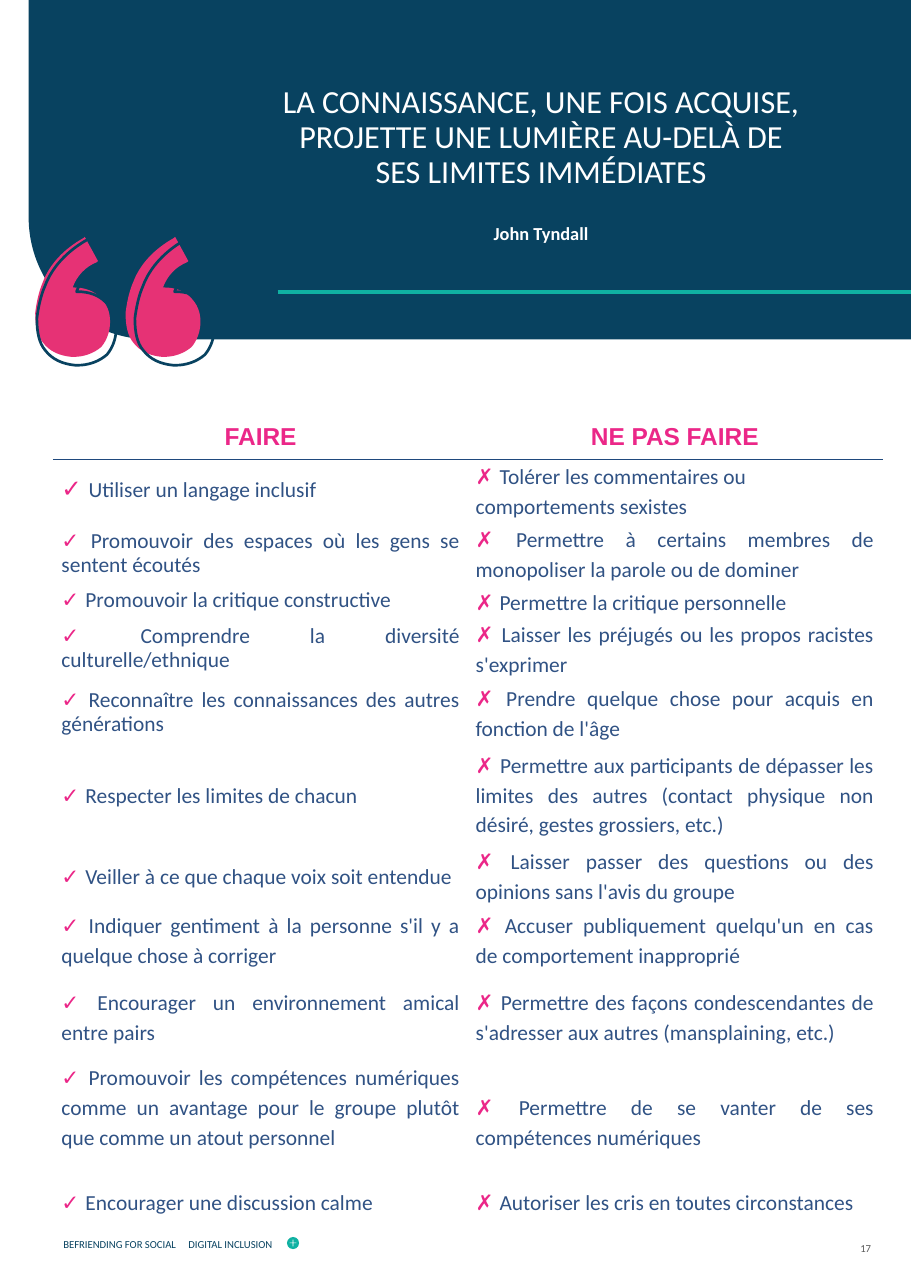
from dataclasses import dataclass
from typing import Optional

from lxml.etree import SubElement
from pptx import Presentation
from pptx.dml.color import RGBColor
from pptx.enum.shapes import MSO_CONNECTOR, MSO_SHAPE
from pptx.enum.text import MSO_ANCHOR, MSO_AUTO_SIZE, PP_ALIGN
from pptx.oxml.ns import qn
from pptx.util import Emu, Inches, Pt

WIDTH, HEIGHT = Inches(8.27), Inches(11.69)


@dataclass(frozen=True)
class Theme:
    navy: str = "084260"
    teal: str = "10B1A2"
    rose: str = "E63275"
    magenta: str = "EB2788"
    text_blue: str = "305284"
    rule_blue: str = "1F497D"
    gray: str = "595959"
    white: str = "FFFFFF"
    body_font: str = "Calibri"
    mark_font: str = "Arial"
    quote_size: float = 21
    author_size: float = 12
    heading_size: float = 16
    body_size: float = 14
    footer_size: float = 7


THEME = Theme()


@dataclass(frozen=True)
class Area:
    """A rectangle in percent of the slide's width and height."""
    left: float
    top: float
    width: float
    height: float

    def emu(self) -> tuple:
        return across(self.left), down(self.top), across(self.width), down(self.height)


@dataclass(frozen=True)
class Advice:
    height: float
    do: str
    avoid: str
    do_spacing: float = 1.15
    do_mark_size: float = THEME.body_size
    avoid_align: PP_ALIGN = PP_ALIGN.JUSTIFY
    do_bottom: float = 0


@dataclass(frozen=True)
class QuotePair:
    """Two quote marks, side by side, drawn as one shape."""
    lefts: tuple
    top: float
    scale: float = 1
    fill: Optional[str] = None
    line: Optional[str] = None


ADVICE = [
    Advice(4.79, "Utiliser un langage inclusif",
           "Tolérer les commentaires ou comportements sexistes",
           0.9, THEME.heading_size, PP_ALIGN.LEFT),
    Advice(4.99, "Promouvoir des espaces où les gens se sentent écoutés",
           "Permettre à certains membres de monopoliser la parole ou de dominer", 0.9),
    Advice(2.4, "Promouvoir la critique constructive", "Permettre la critique personnelle", 0.9),
    Advice(4.99, "Comprendre la diversité culturelle/ethnique",
           "Laisser les préjugés ou les propos racistes s'exprimer", 0.9),
    Advice(4.99, "Reconnaître les connaissances des autres générations",
           "Prendre quelque chose pour acquis en fonction de l'âge", 0.9),
    Advice(7.61, "Respecter les limites de chacun",
           "Permettre aux participants de dépasser les limites des autres "
           "(contact physique non désiré, gestes grossiers, etc.)"),
    Advice(4.99, "Veiller à ce que chaque voix soit entendue",
           "Laisser passer des questions ou des opinions sans l'avis du groupe"),
    Advice(4.99, "Indiquer gentiment à la personne s'il y a quelque chose à corriger",
           "Accuser publiquement quelqu'un en cas de comportement inapproprié"),
    Advice(7.01, "Encourager un environnement amical entre pairs",
           "Permettre des façons condescendantes de s'adresser aux autres (mansplaining, etc.)"),
    Advice(9.3, "Promouvoir les compétences numériques comme un avantage "
           "pour le groupe plutôt que comme un atout personnel",
           "Permettre de se vanter de ses compétences numériques", do_bottom=2.33),
    Advice(3.08, "Encourager une discussion calme", "Autoriser les cris en toutes circonstances"),
]

# One quote mark on a 68 by 109 grid: each segment is a line or a cubic curve.
MARK_START = (35, 109)
MARK_SEGMENTS = [
    [(35, 109), (34, 109), (33, 109)], [(22, 108), (13, 104), (7, 96)],
    [(2, 90), (0, 81), (0, 69)], [(1, 61), (3, 50), (7, 41)],
    [(13, 25), (26, 11), (44, 1)], [(45, 0)], [(57, 22)], [(56, 23)],
    [(46, 27), (38, 35), (34, 46)], [(35, 46)], [(45, 46), (53, 49), (59, 55)],
    [(65, 61), (68, 68), (68, 77)], [(68, 86), (65, 94), (60, 100)],
    [(53, 106), (44, 109), (35, 109)],
]
QUOTE_PAIRS = [
    QuotePair((3.87, 13.79), 18.39, fill=THEME.rose),
    QuotePair((4.05, 14.81), 18.48, 1.06, line=THEME.navy),
]


def across(percent: float) -> Emu:
    return Emu(round(WIDTH * percent / 100))


def down(percent: float) -> Emu:
    return Emu(round(HEIGHT * percent / 100))


def color(value: str) -> RGBColor:
    return RGBColor.from_string(value)


def add_span(para, text: str, size: float, tint: str,
             font: str = THEME.body_font, bold: bool = False) -> None:
    span = para.add_run()
    span.text = text
    span.font.name, span.font.size, span.font.bold = font, Pt(size), bold
    span.font.color.rgb = color(tint)


def paint(shape, fill: Optional[str], line: Optional[str] = None) -> None:
    shape.shadow.inherit = False
    if fill:
        shape.fill.solid()
        shape.fill.fore_color.rgb = color(fill)
    else:
        shape.fill.background()
    if line:
        shape.line.color.rgb = color(line)
        shape.line.width = Pt(1.75)
    else:
        shape.line.fill.background()


def add_preset(page, preset: MSO_SHAPE, area: Area, fill: str):
    shape = page.shapes.add_shape(preset, *area.emu())
    paint(shape, fill)
    return shape


def add_label(page, area: Area, text: str, tint: str, align: PP_ALIGN, tab: float = 0) -> None:
    frame = page.shapes.add_textbox(*area.emu()).text_frame
    frame.word_wrap = True
    frame.vertical_anchor = MSO_ANCHOR.MIDDLE
    para = frame.paragraphs[0]
    para.alignment = align
    if tab:
        stops = SubElement(para._p.get_or_add_pPr(), qn("a:tabLst"))
        SubElement(stops, qn("a:tab"), pos=str(across(tab)), algn="l")
    add_span(para, text, THEME.footer_size, tint)


def bend(shape, segments: list) -> None:
    """Turn each run of three line points that belongs to a curve into a cubic curve."""
    lines = iter(list(shape._element.iter(qn("a:lnTo"))))
    for segment in segments:
        first, *others = [next(lines) for _ in segment]
        if others:
            first.tag = qn("a:cubicBezTo")
            for line in others:
                first.append(line[0])
                line.getparent().remove(line)


def add_quote_pair(page, pair: QuotePair) -> None:
    unit = down(9.32) / 109 * pair.scale
    builder = None
    for left in pair.lefts:
        start, *points = [(across(left) + x * unit, down(pair.top) + y * unit)
                          for x, y in [MARK_START, *sum(MARK_SEGMENTS, [])]]
        if builder is None:
            builder = page.shapes.build_freeform(*start)
        else:
            builder.move_to(*start)
        builder.add_line_segments(points, close=True)
    shape = builder.convert_to_shape()
    bend(shape, MARK_SEGMENTS * len(pair.lefts))
    paint(shape, pair.fill, pair.line)


def add_header(page) -> None:
    panel = add_preset(page, MSO_SHAPE.ROUND_1_RECTANGLE, Area(3.14, 0, 96.86, 26.35), THEME.navy)
    panel.rotation = 180
    panel.adjustments[0] = 0.36
    rule = page.shapes.add_connector(MSO_CONNECTOR.STRAIGHT, across(30.47), down(22.67),
                                     across(100), down(22.67))
    rule.line.color.rgb = color(THEME.teal)
    rule.line.width = Pt(3)
    SubElement(rule._element.spPr, qn("a:effectLst"))


def add_quote(page) -> None:
    title = page.shapes.title
    page.shapes._spTree.append(title._element)  # bring in front of the panel
    title.left, title.top, title.width, title.height = Area(26.2, 4.7, 63.36, 16.25).emu()
    frame = title.text_frame
    frame.auto_size, frame.word_wrap = MSO_AUTO_SIZE.NONE, True
    frame.vertical_anchor = MSO_ANCHOR.MIDDLE
    frame.margin_left = across(4.23)
    quote, author = frame.paragraphs[0], frame.add_paragraph()
    for para, space in ((quote, 0), (author, 22.7)):
        para.alignment, para.line_spacing, para.space_before = PP_ALIGN.CENTER, 0.9, Pt(space)
    add_span(quote, "LA CONNAISSANCE, UNE FOIS ACQUISE, PROJETTE UNE LUMIÈRE "
             "AU-DELÀ DE SES LIMITES IMMÉDIATES", THEME.quote_size, THEME.white)
    add_span(author, "John Tyndall", THEME.author_size, THEME.white, bold=True)


def format_cell(cell, align: PP_ALIGN, spacing: float, bottom: float = 0, **edges: str):
    """Clear the fill, set the borders and return the paragraph to write in."""
    cell.margin_left = cell.margin_right = across(0.87)
    cell.margin_top, cell.margin_bottom = 0, down(bottom)
    cell.vertical_anchor = MSO_ANCHOR.MIDDLE
    properties = cell._tc.get_or_add_tcPr()
    for edge in ("lnL", "lnR", "lnT", "lnB"):
        line = SubElement(properties, qn(f"a:{edge}"), w=str(Pt(1)))
        fill = SubElement(line, qn("a:solidFill"))
        SubElement(fill, qn("a:srgbClr"), val=edges.get(edge, THEME.white))
    cell.fill.background()
    para = cell.text_frame.paragraphs[0]
    para.alignment, para.line_spacing = align, spacing
    return para


def add_advice_table(page) -> None:
    heights = [3.25, *(advice.height for advice in ADVICE)]
    area = Area(5.88, 32.42, 90.93, sum(heights))
    table = page.shapes.add_table(len(heights), 2, *area.emu()).table
    table.first_row = table.horz_banding = False
    for row, height in zip(table.rows, heights):
        row.height = down(height)
    for column, heading in enumerate(("FAIRE", "NE PAS FAIRE")):
        para = format_cell(table.cell(0, column), PP_ALIGN.CENTER, 0.9, lnB=THEME.rule_blue)
        add_span(para, heading, THEME.heading_size, THEME.magenta, THEME.mark_font, True)
    for row, advice in enumerate(ADVICE, 1):
        edges = {"lnT": THEME.rule_blue} if row == 1 else {}
        sides = (("✓ ", advice.do, PP_ALIGN.JUSTIFY, advice.do_spacing,
                  advice.do_bottom, advice.do_mark_size),
                 ("✗ ", advice.avoid, advice.avoid_align, 1.15, 0, THEME.body_size))
        for column, (mark, text, align, spacing, bottom, size) in enumerate(sides):
            para = format_cell(table.cell(row, column), align, spacing, bottom, **edges)
            add_span(para, mark, size, THEME.magenta, THEME.mark_font, True)
            add_span(para, text, THEME.body_size, THEME.text_blue)


def add_footer(page) -> None:
    add_label(page, Area(5.76, 94.87, 48.73, 3.42), "BEFRIENDING FOR SOCIAL\tDIGITAL INCLUSION",
              THEME.navy, PP_ALIGN.LEFT, tab=13.74)
    add_preset(page, MSO_SHAPE.OVAL, Area(31.5, 96.04, 1.33, 0.94), THEME.teal)
    plus = add_preset(page, MSO_SHAPE.CROSS, Area(31.8, 96.25, 0.73, 0.52), THEME.white)
    plus.adjustments[0] = 0.46
    add_label(page, Area(91.25, 94.7, 5.56, 4.36), "17", THEME.gray, PP_ALIGN.RIGHT)


def main() -> None:
    deck = Presentation()
    deck.slide_width, deck.slide_height = WIDTH, HEIGHT
    page = deck.slides.add_slide(deck.slide_layouts[5])
    add_header(page)
    add_quote(page)
    for pair in QUOTE_PAIRS:
        add_quote_pair(page, pair)
    add_advice_table(page)
    add_footer(page)
    deck.save("out.pptx")


if __name__ == "__main__":
    main()
